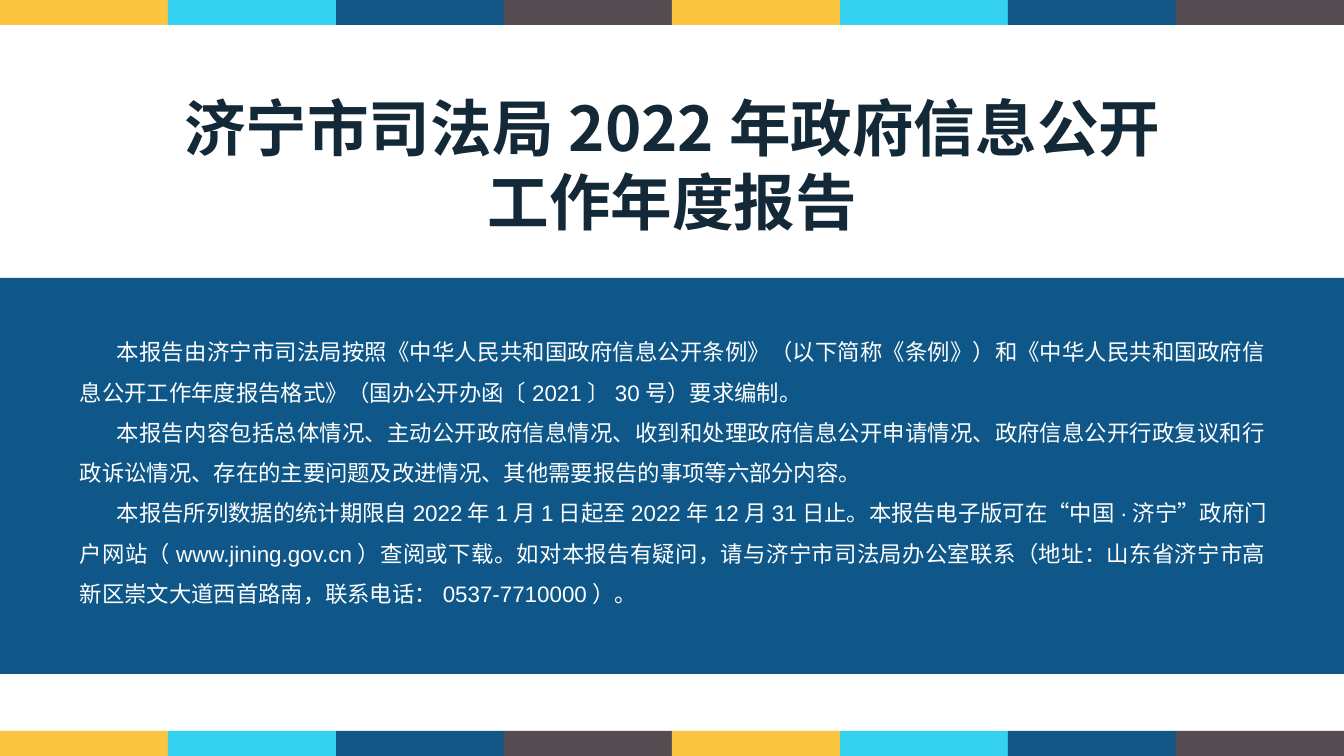
import pptx
import pptx.dml.color
import pptx.enum.lang
import pptx.enum.shapes
import pptx.enum.text
import pptx.oxml.ns
import pptx.util
from lxml import etree

TITLE = ["济宁市司法局2022年政府信息公开", "工作年度报告"]
REPORT = [
    "本报告由济宁市司法局按照《中华人民共和国政府信息公开条例》（以下简称《条例》）和《中华人民共和国政府信息公开工作年度报告格式》（国办公开办函〔2021〕30号）要求编制。",
    "本报告内容包括总体情况、主动公开政府信息情况、收到和处理政府信息公开申请情况、政府信息公开行政复议和行政诉讼情况、存在的主要问题及改进情况、其他需要报告的事项等六部分内容。",
    "本报告所列数据的统计期限自2022年1月1日起至2022年12月31日止。本报告电子版可在“中国·济宁”政府门户网站（www.jining.gov.cn）查阅或下载。如对本报告有疑问，请与济宁市司法局办公室联系（地址：山东省济宁市高新区崇文大道西首路南，联系电话：0537-7710000）。",
]
COLORS = {
    "yellow": "FCC540",
    "cyan": "35D1F1",
    "blue": "115686",
    "gray": "554C51",
    "panel": "0E5788",
    "title": "142938",
    "report": "FFFFFF",
}
STRIPE = ["yellow", "cyan", "blue", "gray"] * 2
CJK_FONT = "Noto Sans CJK SC"
WIDTH, HEIGHT = 1344, 756
STRIPE_HEIGHT = 25
INDENT = 37
ALIGN = pptx.enum.text.PP_ALIGN


def px(length):
    return round(length * 914400 / 100.8)


def rgb(name):
    return pptx.dml.color.RGBColor.from_string(COLORS[name])


def add_band(shapes, left, top, width, height, color):
    band = shapes.add_shape(
        pptx.enum.shapes.MSO_SHAPE.RECTANGLE, px(left), px(top), px(width), px(height)
    )
    band.shadow.inherit = False
    band.fill.solid()
    band.fill.fore_color.rgb = rgb(color)
    band.line.fill.background()


def add_stripe(slide, top):
    stripe = slide.shapes.add_group_shape()
    width = WIDTH // len(STRIPE)
    for column, color in enumerate(STRIPE):
        add_band(stripe.shapes, column * width, top, width, STRIPE_HEIGHT, color)


def add_text(slide, box, lines, align, size, font, color, bold=False, spacing=None, indent=0):
    frame = slide.shapes.add_textbox(*map(px, box)).text_frame
    frame.word_wrap = True
    frame.text = "\n".join(lines)
    for paragraph in frame.paragraphs:
        paragraph.alignment = align
        paragraph.line_spacing = spacing
        if indent:
            paragraph._p.get_or_add_pPr().set("indent", str(px(indent)))
        for run in paragraph.runs:
            run.font.size = pptx.util.Pt(size)
            run.font.bold = bold
            run.font.name = font
            run.font.color.rgb = rgb(color)
            run.font.language_id = pptx.enum.lang.MSO_LANGUAGE_ID.SIMPLIFIED_CHINESE
            east_asian = etree.SubElement(run._r.get_or_add_rPr(), pptx.oxml.ns.qn("a:ea"))
            east_asian.set("typeface", CJK_FONT)


def main():
    deck = pptx.Presentation()
    deck.slide_width, deck.slide_height = px(WIDTH), px(HEIGHT)
    slide = deck.slides.add_slide(deck.slide_layouts[6])
    add_text(slide, (111, 85, 1123, 159), TITLE, ALIGN.CENTER, 44, CJK_FONT, "title", bold=True)
    for top in (HEIGHT - STRIPE_HEIGHT, 0):
        add_stripe(slide, top)
    add_band(slide.shapes, 0, 278, WIDTH, 396, "panel")
    add_text(slide, (70, 320, 1207, 336), REPORT, ALIGN.JUSTIFY, 16, "Arial", "report",
             spacing=1.5, indent=INDENT)
    deck.save("out.pptx")


if __name__ == "__main__":
    main()
